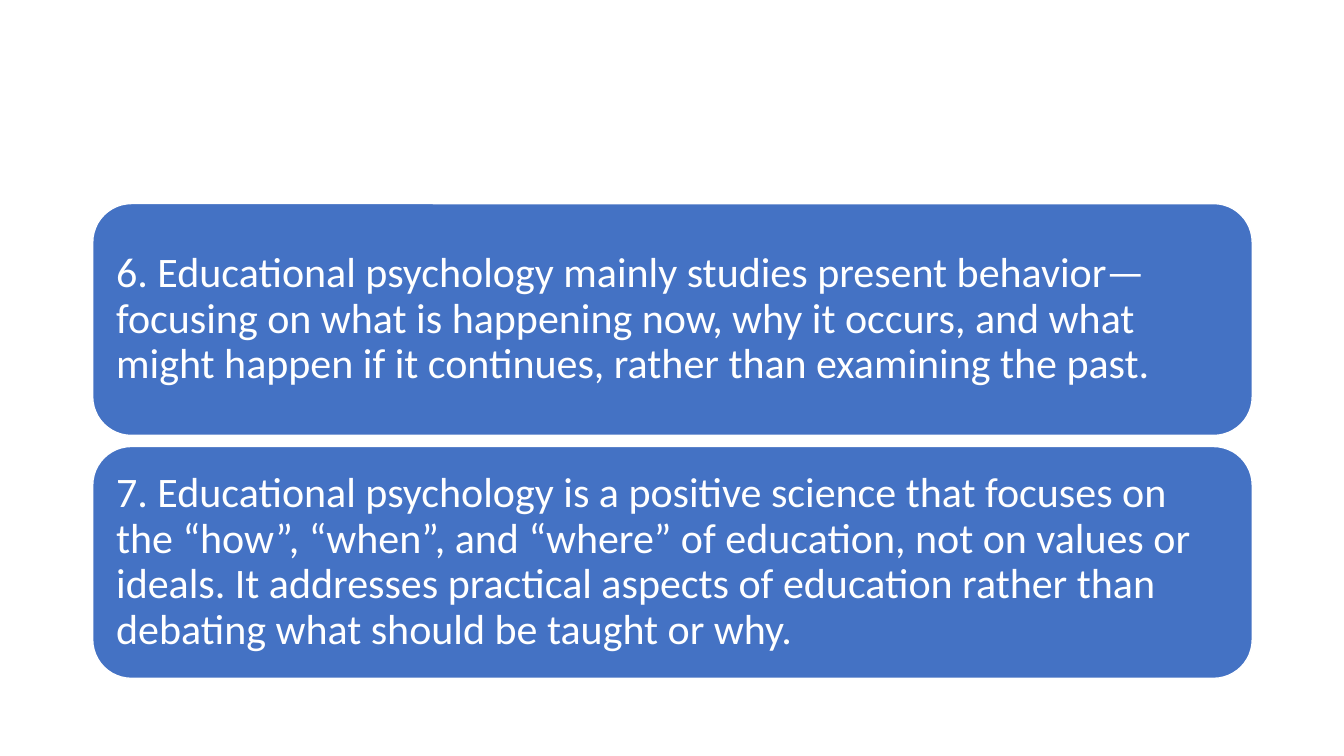
from pptx import Presentation
from pptx.dml.color import RGBColor
from pptx.enum.shapes import MSO_SHAPE
from pptx.enum.text import MSO_ANCHOR, PP_ALIGN
from pptx.util import Inches, Pt

COLORS = {"card": "4472C4", "white": "FFFFFF"}
POINTS = [
    "6. Educational psychology mainly studies present behavior—focusing on what is "
    "happening now, why it occurs, and what might happen if it continues, rather than "
    "examining the past.",
    "7. Educational psychology is a positive science that focuses on the “how”, “when”, "
    "and “where” of education, not on values or ideals. It addresses practical aspects "
    "of education rather than debating what should be taught or why.",
]
CARD_LEFT, CARD_TOP = 0.92, 2.02
CARD_WIDTH, CARD_HEIGHT = 11.5, 2.3
CARD_STEP = 2.41
INSET = Inches(0.12)

presentation = Presentation()
presentation.slide_width = Inches(13.33)
presentation.slide_height = Inches(7.5)
slide = presentation.slides.add_slide(presentation.slide_layouts[6])

for index, point in enumerate(POINTS):
    card = slide.shapes.add_shape(
        MSO_SHAPE.ROUNDED_RECTANGLE,
        Inches(CARD_LEFT),
        Inches(CARD_TOP + index * CARD_STEP),
        Inches(CARD_WIDTH),
        Inches(CARD_HEIGHT),
    )
    card.shadow.inherit = False
    card.fill.solid()
    card.fill.fore_color.rgb = RGBColor.from_string(COLORS["card"])
    card.line.color.rgb = RGBColor.from_string(COLORS["white"])
    card.line.width = Pt(1)

    text_frame = card.text_frame
    text_frame.word_wrap = True
    text_frame.vertical_anchor = MSO_ANCHOR.MIDDLE
    text_frame.margin_left = text_frame.margin_right = INSET
    text_frame.margin_top = text_frame.margin_bottom = INSET
    text_frame.text = point

    paragraph = text_frame.paragraphs[0]
    paragraph.alignment = PP_ALIGN.LEFT
    paragraph.line_spacing = 0.9
    font = paragraph.runs[0].font
    font.name = "Calibri"
    font.size = Pt(30)
    font.color.rgb = RGBColor.from_string(COLORS["white"])

presentation.save("out.pptx")
